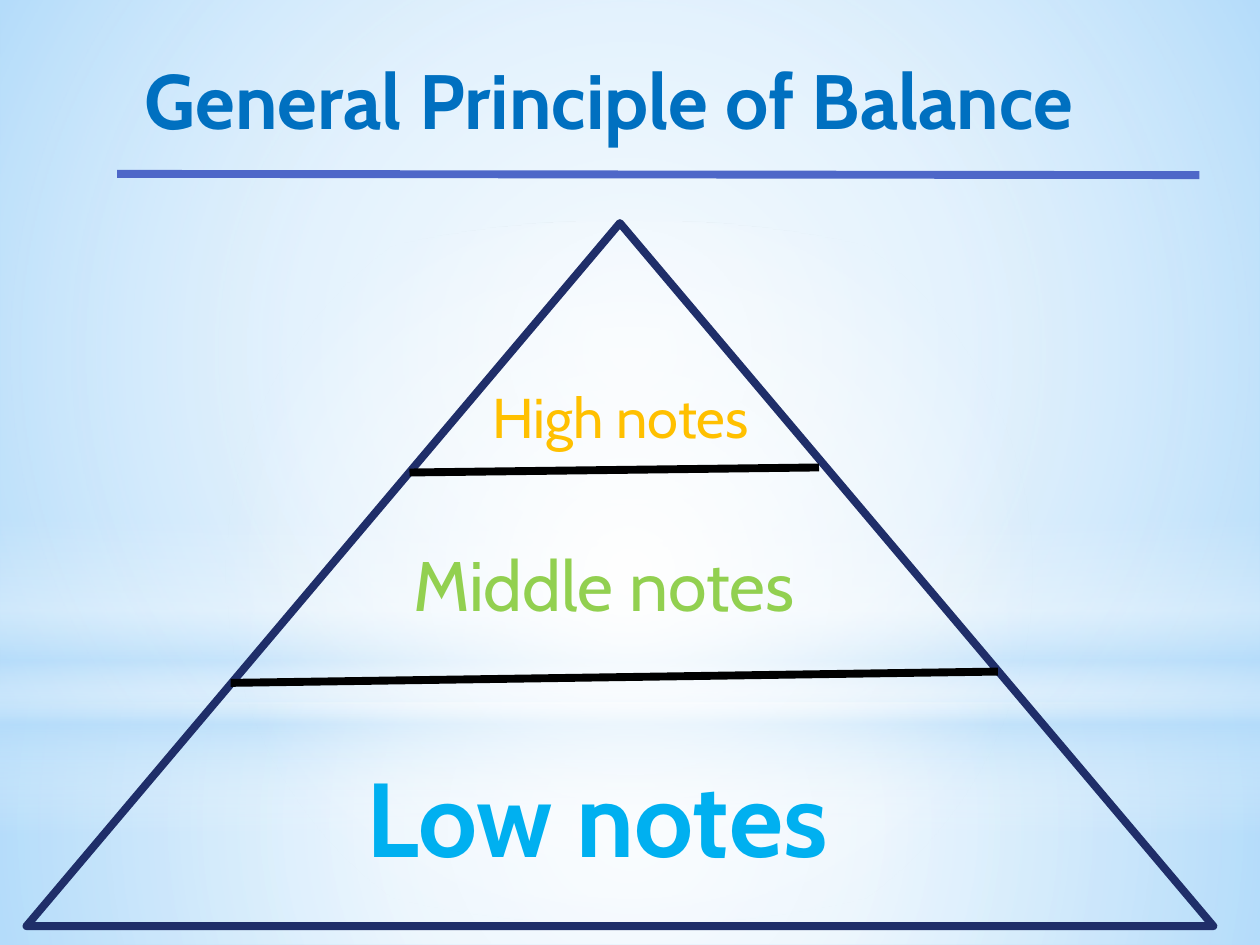
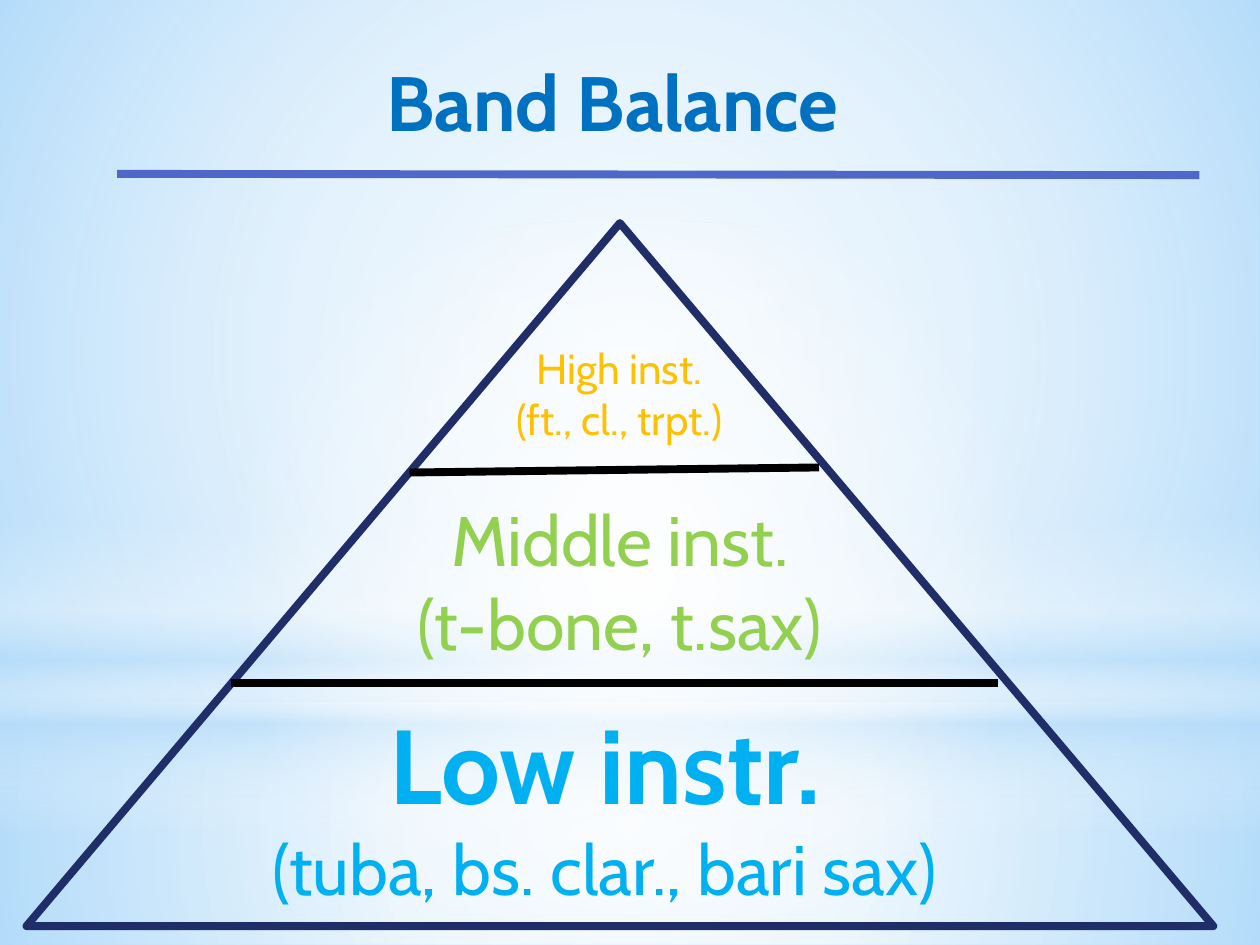
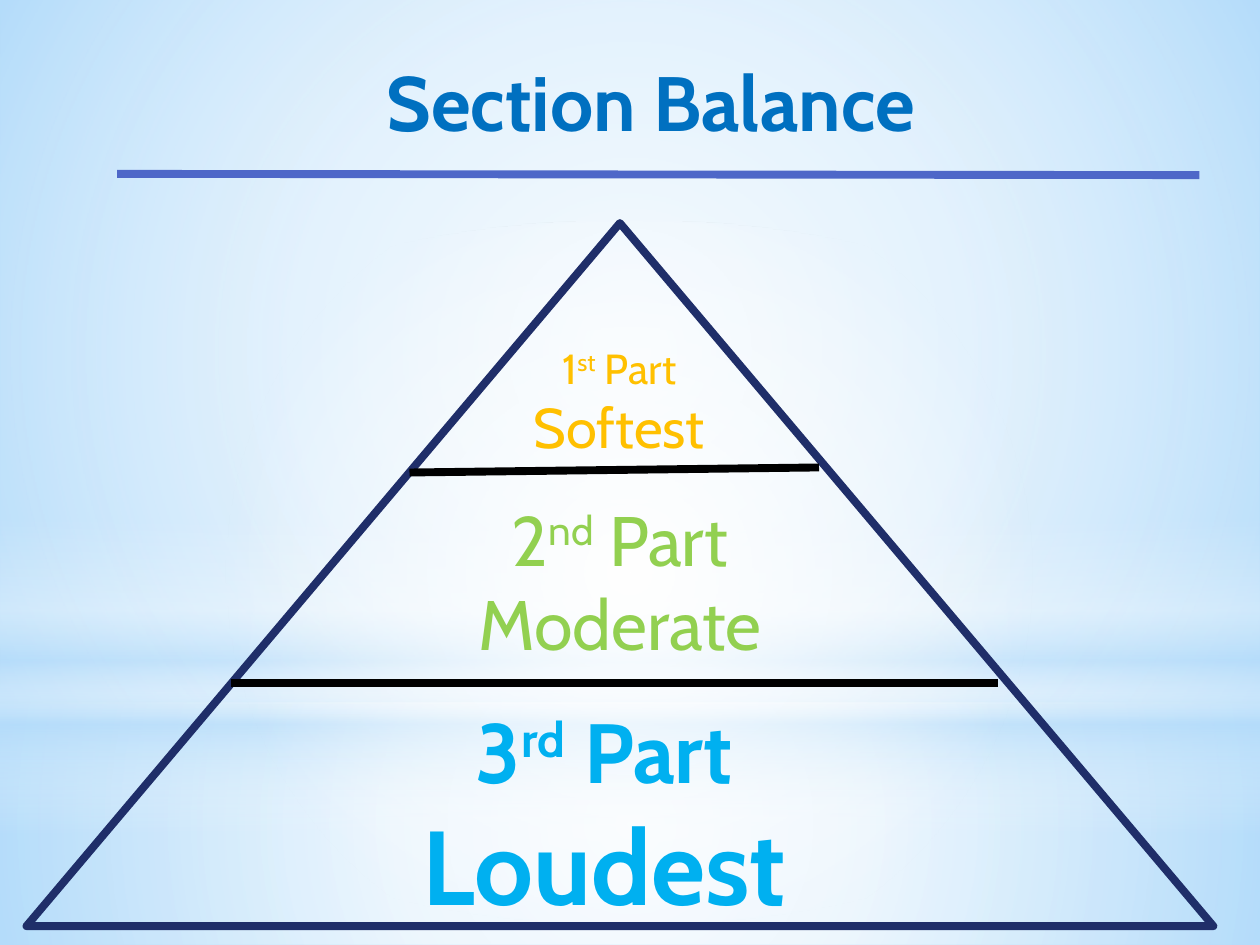
import pptx
import pptx.dml.color
import pptx.enum.shapes
import pptx.enum.text
import pptx.oxml
import pptx.oxml.ns
import pptx.util
from lxml import etree

Inches = pptx.util.Inches
RGBColor = pptx.dml.color.RGBColor
SHAPES = pptx.enum.shapes.MSO_SHAPE
ALIGN = pptx.enum.text.PP_ALIGN

FONT = "Cabin"
SKY = RGBColor(0xB4, 0xDC, 0xFA)
WHITE = RGBColor(0xFF, 0xFF, 0xFF)
BLACK = RGBColor(0x00, 0x00, 0x00)
NAVY = RGBColor(0x1F, 0x2E, 0x69)
RULE_BLUE = RGBColor(0x4E, 0x67, 0xC8)
TITLE_BLUE = RGBColor(0x00, 0x70, 0xC0)
LOW_BLUE = RGBColor(0x00, 0xB0, 0xF0)
MIDDLE_GREEN = RGBColor(0x92, 0xD0, 0x50)
HIGH_GOLD = RGBColor(0xFF, 0xC0, 0x00)
LINE_WIDTH = pptx.util.Pt(4.5)

RADIAL = '<a:path path="circle"><a:fillToRect l="50000" t="50000" r="50000" b="50000"/></a:path>'
DOWNWARD = '<a:lin ang="5400000" scaled="0"/>'

# Each glow: preset, (left, top, width, height), direction, stops of (position, colour, opacity)
GLOWS = [
    (SHAPES.RECTANGLE, (0, 5.58, 10, 1.92), RADIAL,
     [(0, WHITE, 91), (37, WHITE, 76), (100, SKY, 79)]),
    (SHAPES.RECTANGLE, (0, 0, 10, 5.58), RADIAL,
     [(0, WHITE, 89), (48, WHITE, 62), (100, SKY, 79)]),
    (SHAPES.RECTANGLE, (0, 4.12, 10, 2.5), DOWNWARD,
     [(0, WHITE, 0), (29, WHITE, 30), (45, SKY, 40), (55, WHITE, 26),
      (65, SKY, 60), (100, WHITE, 0)]),
    (SHAPES.OVAL, (0, 1.75, 10, 5.58), RADIAL, [(0, WHITE, 100), (56, WHITE, 0)]),
]

# Each label: (left, top, width, height), colour, lines of (text, size, bold).
# Text between ^ marks is superscript.
SLIDES = [
    {
        "title": ("General Principle of Balance", (1.05, 0.37, 8.39, 0.84)),
        "lower_divider_right": 5.33,
        "align": ALIGN.LEFT,
        "labels": [
            ((2.81, 5.92, 4.21, 1.11), LOW_BLUE, [("Low notes", 60, True)]),
            ((3.18, 4.25, 3.39, 0.77), MIDDLE_GREEN, [("Middle notes", 40, False)]),
            ((3.81, 2.99, 2.32, 0.64), HIGH_GOLD, [("High notes", 32, False)]),
        ],
    },
    {
        "title": ("Band Balance", (2.97, 0.38, 4.05, 0.84)),
        "lower_divider_right": 5.42,
        "align": ALIGN.CENTER,
        "labels": [
            ((1.54, 5.5, 6.52, 1.78), LOW_BLUE,
             [("Low instr.", 60, True), ("(tuba, bs. clar., bari sax)", 40, False)]),
            ((2.98, 3.89, 3.88, 1.45), MIDDLE_GREEN,
             [("Middle inst.", 40, False), ("(t-bone, t.sax)", 40, False)]),
            ((3.72, 2.67, 2.39, 0.91), HIGH_GOLD,
             [("High inst.", 24, False), ("(ft., cl., trpt.)", 24, False)]),
        ],
    },
    {
        "title": ("Section Balance", (2.97, 0.38, 4.76, 0.84)),
        "lower_divider_right": 5.42,
        "align": ALIGN.CENTER,
        "labels": [
            ((3.14, 5.5, 3.31, 1.92), LOW_BLUE,
             [("3^rd^ Part", 48, True), ("Loudest", 60, True)]),
            ((3.64, 3.89, 2.56, 1.45), MIDDLE_GREEN,
             [("2^nd^ Part", 40, False), ("Moderate", 40, False)]),
            ((4.11, 2.67, 1.61, 1.04), HIGH_GOLD,
             [("1^st^ Part", 24, False), ("Softest", 32, False)]),
        ],
    },
]


def inches(values):
    return [Inches(value) for value in values]


def add_glow(slide, preset, box, direction, stops):
    glow = slide.shapes.add_shape(preset, *inches(box))
    glow.shadow.inherit = False
    glow.line.fill.background()
    stop_xml = "".join(
        f'<a:gs pos="{position * 1000}"><a:srgbClr val="{color}">'
        f'<a:alpha val="{opacity * 1000}"/></a:srgbClr></a:gs>'
        for position, color, opacity in stops)
    gradient = pptx.oxml.parse_xml(
        f'<a:gradFill {pptx.oxml.ns.nsdecls("a")} rotWithShape="1">'
        f'<a:gsLst>{stop_xml}</a:gsLst>{direction}</a:gradFill>')
    geometry = glow.element.spPr.find(pptx.oxml.ns.qn("a:prstGeom"))
    geometry.addnext(gradient)


def add_backdrop(slide):
    slide.background.fill.solid()
    slide.background.fill.fore_color.rgb = SKY
    for glow in GLOWS:
        add_glow(slide, *glow)


def add_line(slide, start, end, color):
    line = slide.shapes.add_connector(
        pptx.enum.shapes.MSO_CONNECTOR.STRAIGHT, *inches(start + end))
    line.line.color.rgb = color
    line.line.width = LINE_WIDTH
    etree.SubElement(line.element.spPr, pptx.oxml.ns.qn("a:effectLst"))


def add_label(slide, box, color, lines, align):
    frame = slide.shapes.add_textbox(*inches(box)).text_frame
    frame.word_wrap = False
    frame.auto_size = pptx.enum.text.MSO_AUTO_SIZE.SHAPE_TO_FIT_TEXT
    frame.text = "\n".join(text.replace("^", "") for text, _, _ in lines)
    for paragraph, (text, size, bold) in zip(frame.paragraphs, lines):
        paragraph.alignment = align
        parts = text.split("^")
        paragraph.runs[0].text = parts[0]
        for part in parts[1:]:
            paragraph.add_run().text = part
        for index, run in enumerate(paragraph.runs):
            run.font.name = FONT
            run.font.size = pptx.util.Pt(size)
            run.font.bold = bold
            run.font.color.rgb = color
            if index % 2:
                run.font._element.set("baseline", "30000")


def add_title(slide, text, box):
    add_label(slide, box, TITLE_BLUE, [(text, 44, True)], ALIGN.LEFT)
    add_line(slide, (0.93, 1.38), (9.52, 1.39), RULE_BLUE)


def add_pyramid(slide, lower_divider_right):
    """Draw the triangle and the two dividers that cut it into three tiers."""
    pyramid = slide.shapes.add_shape(
        SHAPES.ISOSCELES_TRIANGLE, *inches((0.21, 1.77, 9.42, 5.58)))
    pyramid.shadow.inherit = False
    pyramid.fill.background()
    pyramid.line.color.rgb = NAVY
    pyramid.line.width = LINE_WIDTH
    outline = pyramid.element.spPr.find(pptx.oxml.ns.qn("a:ln"))
    etree.SubElement(outline, pptx.oxml.ns.qn("a:round"))
    add_line(slide, (3.25, 3.75), (6.5, 3.71), BLACK)
    add_line(slide, (1.83, 5.42), (7.92, lower_divider_right), BLACK)


def main():
    deck = pptx.Presentation()
    deck.slide_width = Inches(10)
    deck.slide_height = Inches(7.5)
    for content in SLIDES:
        slide = deck.slides.add_slide(deck.slide_layouts[6])
        add_backdrop(slide)
        add_title(slide, *content["title"])
        add_pyramid(slide, content["lower_divider_right"])
        for box, color, lines in content["labels"]:
            add_label(slide, box, color, lines, content["align"])
    deck.save("out.pptx")


if __name__ == "__main__":
    main()
